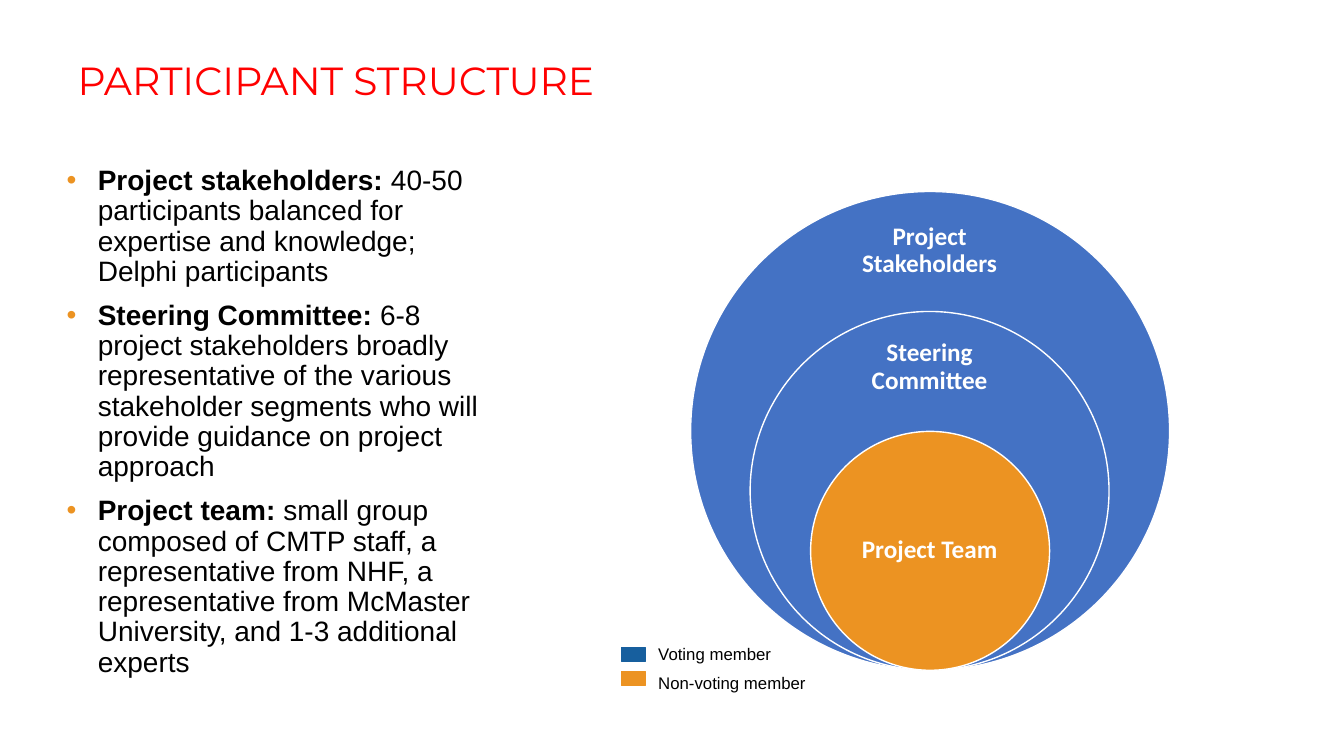
"""Build the participant structure slide with nested circles and a legend."""
from dataclasses import dataclass
from typing import Any

from lxml.etree import SubElement
from pptx import Presentation
from pptx.dml.color import RGBColor
from pptx.enum.shapes import MSO_SHAPE as SHAPE
from pptx.enum.text import MSO_ANCHOR as ANCHOR, MSO_AUTO_SIZE as AUTO, PP_ALIGN as ALIGN
from pptx.oxml.ns import qn
from pptx.util import Emu, Pt

PX = 9144
COLORS = {
    "title": "FF0000", "text": "000000", "white": "FFFFFF",
    "circle": "4472C4", "orange": "EC9322", "voting": "175F9E",
}
FRAME = {"word_wrap": True, "auto_size": AUTO.NONE}
TITLE_FONT = {"name": "Montserrat", "size": Pt(28), "bold": False}
BODY_FONT = {"name": "Arial", "size": Pt(20)}
RING_FONT = {"name": "Calibri", "size": Pt(18), "bold": True}
LEGEND_FONT = {"name": "Arial", "size": Pt(12)}
CENTER_X, BOTTOM, DIAMETER = 922, 665, 475
INDENT = 31


@dataclass
class Box:
    left: int
    top: int
    width: int
    height: int

    def emu(self) -> list[Emu]:
        return [Emu(v * PX) for v in (self.left, self.top, self.width, self.height)]


@dataclass
class Ring:
    label: str
    quarters: int
    color: str
    label_box: Box


@dataclass
class Key:
    label: str
    color: str
    swatch_top: int
    label_top: int


@dataclass
class Bullet:
    term: str
    detail: str


BULLETS = [
    Bullet("Project stakeholders:", " 40-50 participants balanced for expertise and "
           "knowledge; Delphi participants"),
    Bullet("Steering Committee: ", "6-8 project stakeholders broadly representative of the "
           "various stakeholder segments who will provide guidance on project approach"),
    Bullet("Project team: ", "small group composed of CMTP staff, a representative from NHF, "
           "a representative from McMaster University, and 1-3 additional experts"),
]
RINGS = [
    Ring("Project Stakeholders", 4, "circle", Box(839, 213, 166, 71)),
    Ring("Steering Committee", 3, "circle", Box(839, 331, 166, 67)),
    Ring("Project Team", 2, "orange", Box(838, 486, 168, 119)),
]
KEYS = [
    Key("Voting member", "voting", 642, 634),
    Key("Non-voting member", "orange", 666, 662),
]


def rgb(name: str) -> RGBColor:
    return RGBColor.from_string(COLORS[name])


def apply(target: Any, values: dict[str, Any]) -> None:
    for name, value in values.items():
        setattr(target, name, value)


def place(sp: Any, box: Box) -> None:
    apply(sp, dict(zip(("left", "top", "width", "height"), box.emu())))


def add_run(p: Any, text: str, font: dict[str, Any], color: str) -> None:
    r = p.add_run()
    r.text = text
    apply(r.font, font)
    r.font.color.rgb = rgb(color)


def add_shape(s: Any, kind: Any, box: Box, fill: str, line: str, weight: float) -> None:
    sp = s.shapes.add_shape(kind, *box.emu())
    sp.shadow.inherit = False
    sp.fill.solid()
    sp.fill.fore_color.rgb = rgb(fill)
    sp.line.color.rgb = rgb(line)
    sp.line.width = Pt(weight)


def add_label(s: Any, box: Box, text: str, font: dict[str, Any], color: str,
              frame: dict[str, Any], para: dict[str, Any]) -> None:
    tf = s.shapes.add_textbox(*box.emu()).text_frame
    apply(tf, FRAME | frame)
    p = tf.paragraphs[0]
    apply(p, para)
    add_run(p, text, font, color)


def set_bullet(p: Any, color: str) -> None:
    pPr = p._p.get_or_add_pPr()
    pPr.set("marL", str(INDENT * PX))
    pPr.set("indent", str(-INDENT * PX))
    clr = SubElement(pPr, qn("a:buClr"))
    SubElement(clr, qn("a:srgbClr")).set("val", COLORS[color])
    SubElement(pPr, qn("a:buFont")).set("typeface", "Arial")
    SubElement(pPr, qn("a:buChar")).set("char", "•")


def fill_title(sp: Any) -> None:
    place(sp, Box(67, 55, 1200, 54))
    tf = sp.text_frame
    apply(tf, FRAME | {"vertical_anchor": ANCHOR.MIDDLE})
    p = tf.paragraphs[0]
    apply(p, {"alignment": ALIGN.LEFT, "line_spacing": 0.9})
    add_run(p, "PARTICIPANT STRUCTURE", TITLE_FONT, "title")


def fill_body(sp: Any) -> None:
    place(sp, Box(56, 160, 451, 249))
    tf = sp.text_frame
    apply(tf, FRAME | {"vertical_anchor": ANCHOR.TOP})
    for i, bullet in enumerate(BULLETS):
        p = tf.add_paragraph() if i else tf.paragraphs[0]
        apply(p, {"line_spacing": 0.9, "space_before": Pt(10 if i else 0)})
        set_bullet(p, "orange")
        add_run(p, bullet.term, BODY_FONT | {"bold": True}, "text")
        add_run(p, bullet.detail, BODY_FONT | {"bold": False}, "text")


def draw_ring(s: Any, ring: Ring) -> None:
    size = DIAMETER * ring.quarters // 4
    box = Box(CENTER_X - size // 2, BOTTOM - size, size, size)
    add_shape(s, SHAPE.OVAL, box, ring.color, "white", 1)
    margins = {f"margin_{side}": Emu(14 * PX) for side in ("left", "top", "right", "bottom")}
    add_label(s, ring.label_box, ring.label, RING_FONT, "white",
              margins | {"vertical_anchor": ANCHOR.MIDDLE},
              {"alignment": ALIGN.CENTER, "line_spacing": 0.9})


def draw_key(s: Any, key: Key) -> None:
    add_label(s, Box(643, key.label_top, 295, 30), key.label, LEGEND_FONT, "text",
              {"auto_size": AUTO.SHAPE_TO_FIT_TEXT}, {})
    add_shape(s, SHAPE.RECTANGLE, Box(616, key.swatch_top, 24, 14), key.color, key.color, 0.5)


def main() -> None:
    prs = Presentation()
    apply(prs, {"slide_width": Emu(1333 * PX), "slide_height": Emu(750 * PX)})
    s = prs.slides.add_slide(prs.slide_layouts[1])
    fill_title(s.shapes.title)
    fill_body(s.placeholders[1])
    for ring in RINGS:
        draw_ring(s, ring)
    for key in KEYS:
        draw_key(s, key)
    prs.save("out.pptx")


if __name__ == "__main__":
    main()
